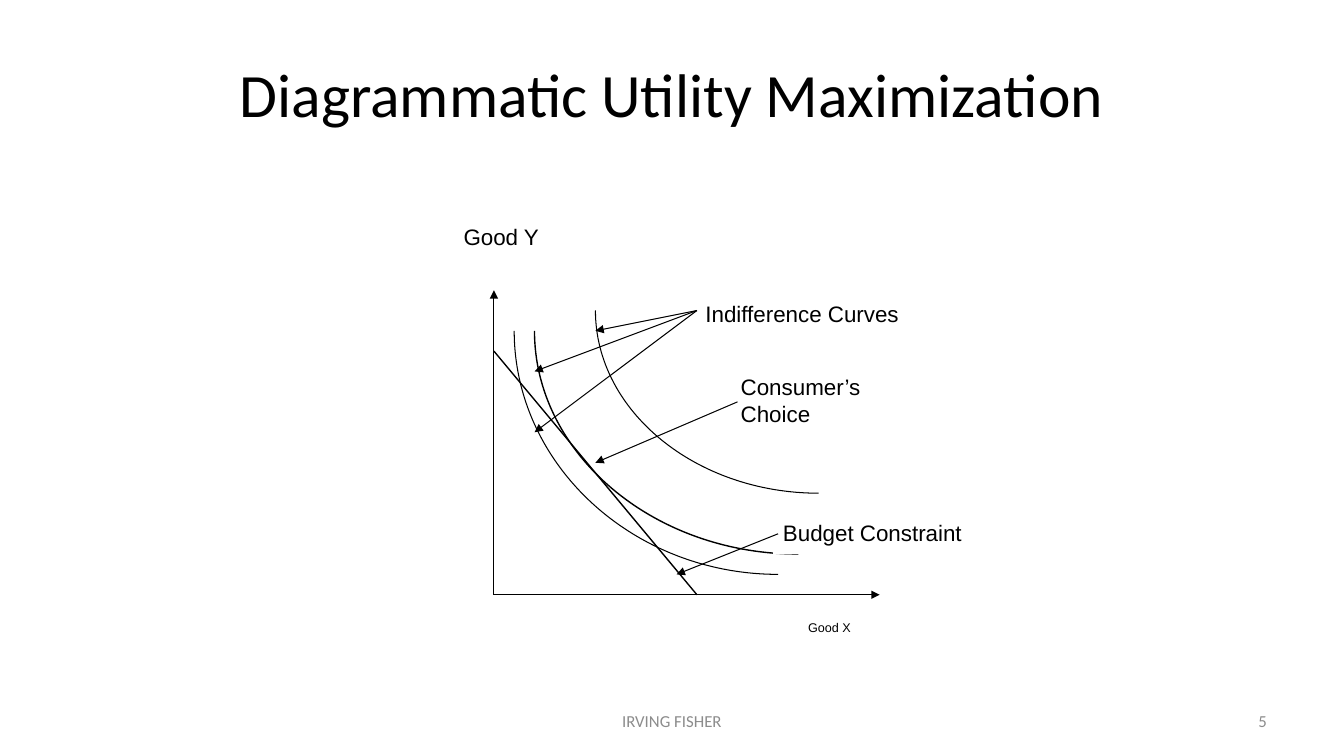
from lxml.etree import SubElement
from pptx import Presentation
from pptx.dml.color import RGBColor
from pptx.enum.shapes import MSO_CONNECTOR as Connector
from pptx.enum.text import MSO_ANCHOR as Anchor, PP_ALIGN as Align
from pptx.oxml.ns import qn
from pptx.util import Pt

BLACK, WHITE, GREY = "000000", "FFFFFF", "8C8C8C"


def colour(hex_code):
    return RGBColor.from_string(hex_code)


class UtilityDiagram:
    origin_x, origin_y, unit = 352.8, 424.8, 14.5
    bend = 0.45

    def __init__(self, slide):
        self.slide = slide
        self.shapes = slide.shapes

    def point(self, x, y):
        return Pt(self.origin_x + x * self.unit), Pt(self.origin_y - y * self.unit)

    def add_wording(self, shape, text, size, font, ink, align, anchor):
        frame = shape.text_frame
        frame.word_wrap = True
        frame.vertical_anchor = anchor
        paragraph = frame.paragraphs[0]
        paragraph.alignment = align
        run = paragraph.add_run()
        run.text = text
        run.font.size = Pt(size)
        run.font.name = font
        run.font.color.rgb = colour(ink)

    def title(self, text, left, top, width, height):
        heading = self.shapes.title
        heading.left, heading.top = Pt(left), Pt(top)
        heading.width, heading.height = Pt(width), Pt(height)
        self.add_wording(heading, text, 44, "Calibri", BLACK, Align.CENTER, Anchor.MIDDLE)

    def text(self, text, left, top, width, height, size=16, font="Arial",
             ink=BLACK, align=Align.LEFT, anchor=Anchor.TOP, fill=None):
        box = self.shapes.add_textbox(Pt(left), Pt(top), Pt(width), Pt(height))
        if fill:
            box.fill.solid()
            box.fill.fore_color.rgb = colour(fill)
        self.add_wording(box, text, size, font, ink, align, anchor)

    def footer(self, text, left, width, align):
        self.text(text, left, 500.4, width, 28.8, 12, "Calibri", GREY, align, Anchor.MIDDLE)

    def line(self, start, end, weight=0.75, arrow=True):
        connector = self.shapes.add_connector(
            Connector.STRAIGHT, *self.point(*start), *self.point(*end))
        connector.line.color.rgb = colour(BLACK)
        connector.line.width = Pt(weight)
        properties = connector._element.spPr
        if arrow:
            SubElement(properties.find(qn("a:ln")), qn("a:tailEnd"), type="triangle")
        SubElement(properties, qn("a:effectLst"))

    def curve(self, top_left, bottom_right, weight=0.75):
        builder = self.shapes.build_freeform(*self.point(*bottom_right))
        builder.add_line_segments([self.point(*top_left)], close=False)
        arc = builder.convert_to_shape()
        arc.shadow.inherit = False
        arc.fill.background()
        arc.line.color.rgb = colour(BLACK)
        arc.line.width = Pt(weight)
        segment = next(arc._element.iter(qn("a:lnTo")))
        outline = segment.getparent()
        outline.remove(segment)
        bezier = SubElement(outline, qn("a:cubicBezTo"))
        width, height = arc.width, arc.height
        for x, y in ((width * self.bend, height), (0, height * (1 - self.bend)), (0, 0)):
            SubElement(bezier, qn("a:pt"), x=str(int(x)), y=str(int(y)))


def main():
    deck = Presentation()
    deck.slide_width, deck.slide_height = Pt(960), Pt(540)
    diagram = UtilityDiagram(deck.slides.add_slide(deck.slide_layouts[5]))

    diagram.title("Diagrammatic Utility Maximization", 48, 21.6, 864, 90)
    diagram.footer("IRVING FISHER", 328, 304, Align.CENTER)
    diagram.footer("5", 688, 224, Align.RIGHT)

    for axis_end in ((0, 15), (19, 0)):
        diagram.line((0, 0), axis_end)
    diagram.curve((2, 13), (15, 2), weight=1)
    diagram.line((0, 12), (10, 0), weight=1, arrow=False)
    diagram.curve((5, 14), (16, 5))
    diagram.curve((1, 13), (14, 1))

    for label, left, top, width, size in (
        ("Good Y", 324, 156.2, 72.7, 16),
        ("Good X", 570.2, 439.2, 72.7, 9),
        ("Indifference Curves", 496.8, 211, 180.7, 16),
        ("Budget Constraint", 552.2, 367.2, 195.8, 16),
    ):
        diagram.text(label, left, top, width, 28.8, size, fill=WHITE)
    diagram.text("Consumer’s Choice", 522, 262.8, 101.5, 43.2)

    diagram.line((14, 3), (9, 1))
    for curve_point in ((5, 13), (2, 11), (2, 8)):
        diagram.line((10, 14), curve_point)
    diagram.line((12, 9.5), (5, 6.5))

    deck.save("out.pptx")


if __name__ == "__main__":
    main()
